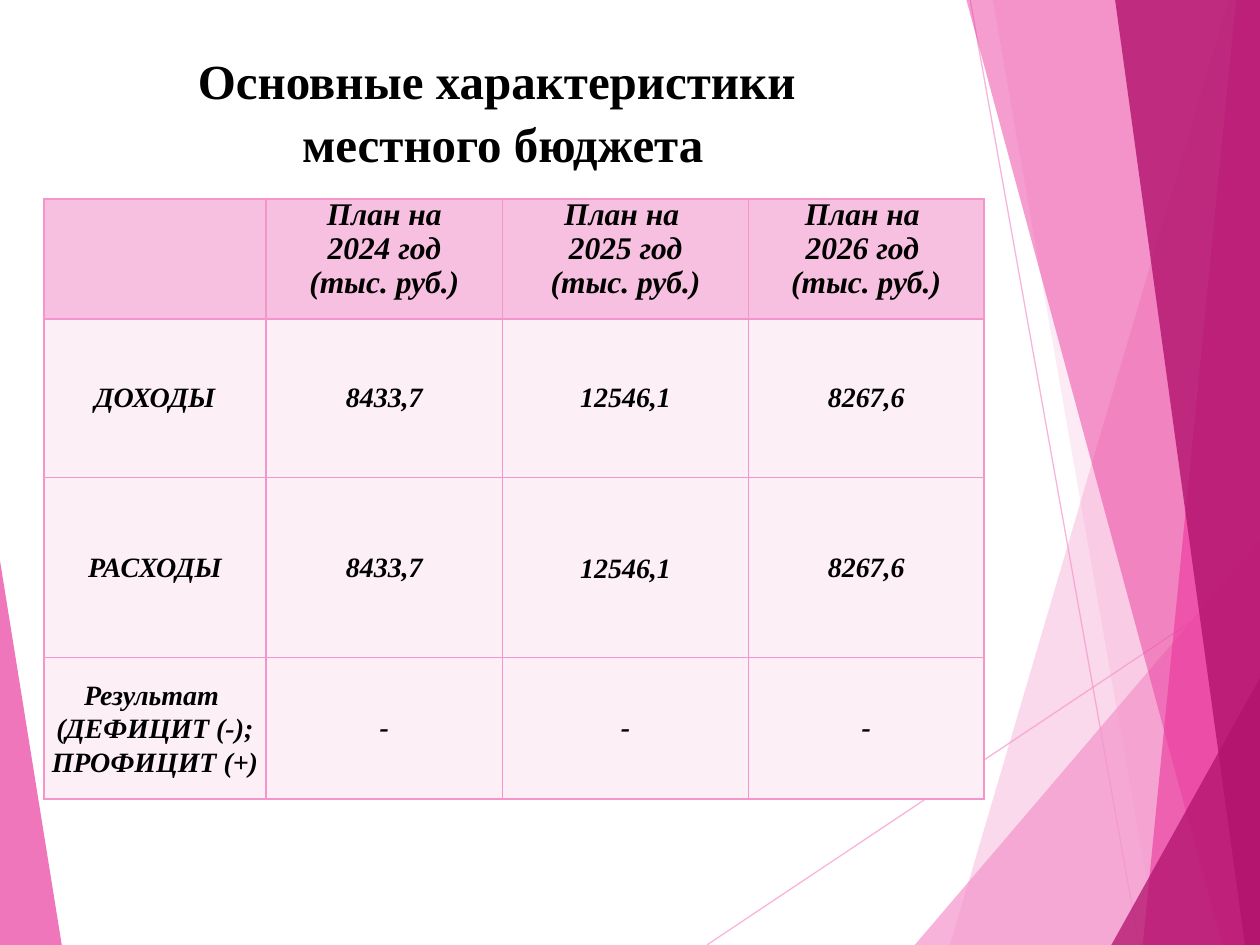
import dataclasses

import lxml.etree
import pptx
import pptx.dml.color
import pptx.enum.shapes
import pptx.enum.text
import pptx.oxml.ns
import pptx.util

Inches = pptx.util.Inches
Pt = pptx.util.Pt
qn = pptx.oxml.ns.qn
MIDDLE = pptx.enum.text.MSO_ANCHOR.MIDDLE
TOP = pptx.enum.text.MSO_ANCHOR.TOP
CENTER = pptx.enum.text.PP_ALIGN.CENTER


@dataclasses.dataclass(frozen=True)
class Theme:
    font: str = "Times New Roman"
    text: str = "000000"
    light_pink: str = "F496CB"
    pink: str = "EB3D9F"
    crimson: str = "B2136D"
    header_fill: str = "F8C0E0"
    body_fill: str = "FDEFF6"
    title_size: int = 28
    header_size: int = 18
    body_size: int = 16
    tight_spacing: float = 19.2


THEME = Theme()

# Colour, opacity in percent, corners in inches
FACETS = [
    (THEME.light_pink, 36, [(9.75, 0), (7.54, 7.5), (10, 7.5), (10, 0)]),
    (THEME.light_pink, 20, [(7.88, 0), (9.19, 7.5), (10, 7.5), (10, 0)]),
    (THEME.light_pink, 72, [(7.26, 7.5), (10, 4.29), (10, 7.5)]),
    (THEME.pink, 50, [(7.67, 0), (9.7, 7.5), (10, 7.5), (10, 0)]),
    (THEME.pink, 66, [(9.81, 0), (9.07, 7.5), (10, 7.5), (10, 0)]),
    (THEME.crimson, 80, [(8.85, 0), (9.88, 7.5), (10, 7.5), (10, 0)]),
    (THEME.crimson, 76, [(8.82, 7.5), (10, 5.38), (10, 7.5)]),
    (THEME.pink, 70, [(0, 4.45), (0.49, 7.5), (0, 7.5)]),
]
RAYS = [((5.61, 7.5), (10, 4.57)), ((7.7, 0), (9.04, 7.5))]

COLUMN_WIDTHS = [1.76, 1.88, 1.95, 1.87]
ROW_HEIGHTS = [0.95, 1.26, 1.43, 1.12]
UNIT = "(тыс. руб.)"
BUDGET = [
    [[], ["План на", "2024 год", UNIT], ["План на ", "2025 год", UNIT],
     ["План на ", "2026 год ", UNIT]],
    [["ДОХОДЫ"], ["8433,7"], ["12546,1"], ["8267,6"]],
    [["РАСХОДЫ"], ["8433,7"], ["12546,1"], ["8267,6"]],
    [["Результат ", "(ДЕФИЦИТ (-); ПРОФИЦИТ (+)"], ["-"], ["-"], ["-"]],
]


def rgb(color):
    return pptx.dml.color.RGBColor.from_string(color)


def set_opacity(element, percent):
    """Apply opacity to the first solid colour found inside the element."""
    color = next(element.iter(qn("a:srgbClr")))
    lxml.etree.SubElement(color, qn("a:alpha"), val=str(percent * 1000))


class SlideBuilder:
    def __init__(self, slide, theme):
        self.slide = slide
        self.theme = theme

    def facet(self, color, opacity, corners):
        points = [(Inches(x), Inches(y)) for x, y in corners]
        builder = self.slide.shapes.build_freeform(*points[0])
        builder.add_line_segments(points[1:], close=True)
        shape = builder.convert_to_shape()
        shape.shadow.inherit = False
        shape.fill.solid()
        shape.fill.fore_color.rgb = rgb(color)
        set_opacity(shape.element.spPr, opacity)
        shape.line.fill.background()

    def ray(self, start, end):
        connector = self.slide.shapes.add_connector(
            pptx.enum.shapes.MSO_CONNECTOR.STRAIGHT,
            *(Inches(value) for value in start + end))
        connector.line.color.rgb = rgb(self.theme.light_pink)
        connector.line.width = Pt(0.75)
        properties = connector.element.spPr
        set_opacity(properties, 70)
        lxml.etree.SubElement(properties, qn("a:effectLst"))

    def add_lines(self, frame, lines, size, italic=False, spacing=None):
        for index, line in enumerate(lines):
            paragraph = frame.paragraphs[0] if index == 0 else frame.add_paragraph()
            paragraph.alignment = CENTER
            if spacing:
                paragraph.line_spacing = spacing
            run = paragraph.add_run()
            run.text = line
            run.font.name = self.theme.font
            run.font.size = Pt(size)
            run.font.bold = True
            run.font.italic = italic
            run.font.color.rgb = rgb(self.theme.text)

    def title(self, lines, left, top, width, height):
        title = self.slide.shapes.title
        title.left, title.top = Inches(left), Inches(top)
        title.width, title.height = Inches(width), Inches(height)
        frame = title.text_frame
        frame.margin_left = frame.margin_right = 0
        frame.margin_top = frame.margin_bottom = 0
        frame.word_wrap = True
        frame.auto_size = pptx.enum.text.MSO_AUTO_SIZE.NONE
        frame.vertical_anchor = TOP
        self.add_lines(frame, lines, self.theme.title_size, spacing=1.07)

    def borders(self, cell):
        properties = cell._tc.get_or_add_tcPr()
        for position, side in enumerate(("a:lnL", "a:lnR", "a:lnT", "a:lnB")):
            line = lxml.etree.Element(qn(side), w=str(Pt(1)))
            fill = lxml.etree.SubElement(line, qn("a:solidFill"))
            lxml.etree.SubElement(fill, qn("a:srgbClr"), val=self.theme.light_pink)
            properties.insert(position, line)

    def cell(self, cell, lines, is_header, tight):
        cell.margin_left = cell.margin_right = 0
        cell.margin_top = cell.margin_bottom = 0
        cell.vertical_anchor = TOP if is_header else MIDDLE
        cell.fill.solid()
        cell.fill.fore_color.rgb = rgb(
            self.theme.header_fill if is_header else self.theme.body_fill)
        self.borders(cell)
        self.add_lines(cell.text_frame, lines,
                       self.theme.header_size if is_header else self.theme.body_size,
                       italic=True,
                       spacing=Pt(self.theme.tight_spacing) if tight else None)

    def table(self, rows, left, top, widths, heights):
        table = self.slide.shapes.add_table(
            len(rows), len(widths), Inches(left), Inches(top),
            Inches(sum(widths)), Inches(sum(heights))).table
        for column, width in zip(table.columns, widths):
            column.width = Inches(width)
        for row, height in zip(table.rows, heights):
            row.height = Inches(height)
        for row_index, row in enumerate(rows):
            for column_index, lines in enumerate(row):
                tight = len(lines) > 1 or (row_index, column_index) == (2, 2)
                self.cell(table.cell(row_index, column_index), lines,
                          row_index == 0, tight)


def main():
    presentation = pptx.Presentation()
    presentation.slide_width = Inches(10)
    presentation.slide_height = Inches(7.5)
    title_only = presentation.slide_layouts[5]
    builder = SlideBuilder(presentation.slides.add_slide(title_only), THEME)
    for start, end in RAYS:
        builder.ray(start, end)
    for color, opacity, corners in FACETS:
        builder.facet(color, opacity, corners)
    builder.table(BUDGET, 0.35, 1.58, COLUMN_WIDTHS, ROW_HEIGHTS)
    builder.title(["Основные характеристики ", "местного бюджета"],
                  0.37, 0.37, 7.24, 0.69)
    presentation.save("out.pptx")


if __name__ == "__main__":
    main()
